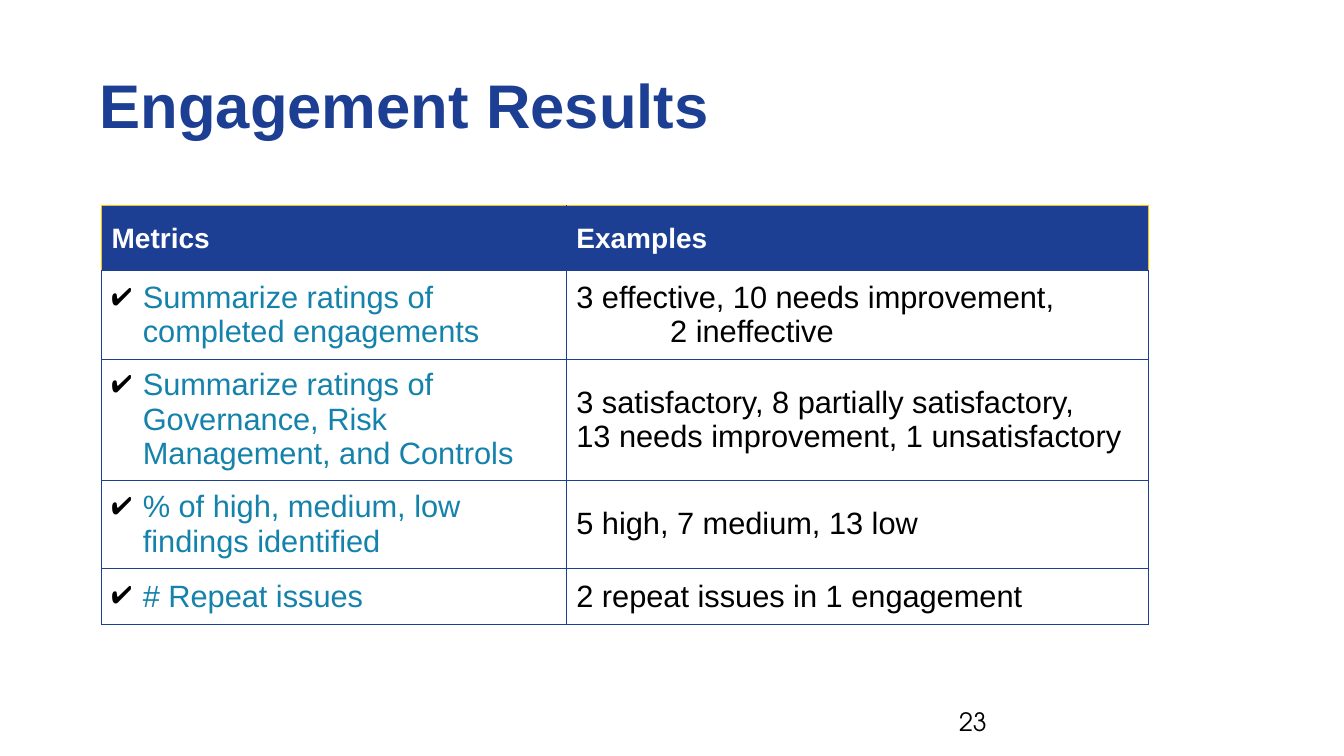
from dataclasses import dataclass

from lxml.etree import SubElement
from pptx import Presentation
from pptx.dml.color import RGBColor
from pptx.enum.text import MSO_ANCHOR, PP_ALIGN
from pptx.oxml.ns import qn
from pptx.util import Pt

NAVY, TEAL, GOLD, BLACK, WHITE = "1C3F94", "1482AB", "FFC000", "000000", "FFFFFF"


@dataclass
class Metric:
    name: str
    examples: list[str]
    height: float
    second_line_indent: float = 0


METRICS = [
    Metric("Summarize ratings of completed engagements",
           ["3 effective, 10 needs improvement,", "2 ineffective"], 63, 67),
    Metric("Summarize ratings of Governance, Risk Management, and Controls",
           ["3 satisfactory, 8 partially satisfactory,",
            "13 needs improvement, 1 unsatisfactory"], 76.5),
    Metric("% of high, medium, low findings identified",
           ["5 high, 7 medium, 13 low"], 63),
    Metric("# Repeat issues", ["2 repeat issues in 1 engagement"], 40.5),
]
HEADER_HEIGHT = 46.5
COLUMN_WIDTHS = [332, 416]


def color(value: str) -> RGBColor:
    return RGBColor.from_string(value)


def style(paragraph, size: float, ink: str, bold: bool = False,
          typeface: str = "Arial") -> None:
    font = paragraph.font
    font.name, font.size, font.bold = typeface, Pt(size), bold
    font.color.rgb = color(ink)


def indent(paragraph, left: float, first: float = 0) -> None:
    properties = paragraph._p.get_or_add_pPr()
    properties.set("marL", str(Pt(left)))
    properties.set("indent", str(Pt(first)))


def add_check(paragraph) -> None:
    indent(paragraph, 22.3, -23.8)
    properties = paragraph._p.get_or_add_pPr()
    ink = SubElement(properties, qn("a:buClr"))
    SubElement(ink, qn("a:srgbClr"), val=BLACK)
    SubElement(properties, qn("a:buChar"), char="✔")


def format_cell(cell, fill: str | None = None, **edges: str) -> None:
    cell.vertical_anchor = MSO_ANCHOR.MIDDLE
    properties = cell._tc.get_or_add_tcPr()
    for side in "LRTB":
        line = SubElement(properties, qn(f"a:ln{side}"), w=str(Pt(0.75)))
        solid = SubElement(line, qn("a:solidFill"))
        SubElement(solid, qn("a:srgbClr"), val=edges.get(side, NAVY))
    if fill:
        cell.fill.solid()
        cell.fill.fore_color.rgb = color(fill)
    else:
        cell.fill.background()


def add_title(slide) -> None:
    title = slide.shapes.title
    title.left, title.top, title.width, title.height = Pt(64), Pt(26), Pt(614), Pt(96.5)
    frame = title.text_frame
    frame.text = "Engagement Results"
    frame.vertical_anchor = MSO_ANCHOR.MIDDLE
    frame.margin_top = frame.margin_bottom = 0
    frame.paragraphs[0].alignment = PP_ALIGN.LEFT
    style(frame.paragraphs[0], 44, NAVY, True)


def add_page_number(slide) -> None:
    frame = slide.shapes.add_textbox(Pt(678), Pt(500.5), Pt(216), Pt(29)).text_frame
    frame.word_wrap = True
    frame.vertical_anchor = MSO_ANCHOR.MIDDLE
    frame.text = "23"
    style(frame.paragraphs[0], 18, BLACK, typeface="TeX Gyre Adventor")


def add_metrics(slide) -> None:
    heights = [HEADER_HEIGHT] + [metric.height for metric in METRICS]
    table = slide.shapes.add_table(
        len(heights), len(COLUMN_WIDTHS), Pt(72.5), Pt(147),
        Pt(sum(COLUMN_WIDTHS)), Pt(sum(heights))).table
    table.horz_banding = False
    for column, width in zip(table.columns, COLUMN_WIDTHS):
        column.width = Pt(width)
    for row, height in zip(table.rows, heights):
        row.height = Pt(height)

    for column, (heading, outer_side) in enumerate([("Metrics", "L"), ("Examples", "R")]):
        cell = table.cell(0, column)
        cell.text = heading
        style(cell.text_frame.paragraphs[0], 20, WHITE, True)
        format_cell(cell, NAVY, **{outer_side: GOLD, "T": GOLD})

    for row, metric in enumerate(METRICS, 1):
        name, examples = table.cell(row, 0), table.cell(row, 1)
        name.text = metric.name
        add_check(name.text_frame.paragraphs[0])
        style(name.text_frame.paragraphs[0], 22, TEAL)
        examples.text = "\n".join(metric.examples)
        for paragraph in examples.text_frame.paragraphs:
            style(paragraph, 22, BLACK)
        if metric.second_line_indent:
            indent(examples.text_frame.paragraphs[1], metric.second_line_indent)
        format_cell(name)
        format_cell(examples)


def main() -> None:
    deck = Presentation()
    deck.slide_width, deck.slide_height = Pt(960), Pt(540)
    slide = deck.slides.add_slide(deck.slide_layouts[5])
    add_title(slide)
    add_page_number(slide)
    add_metrics(slide)
    deck.save("out.pptx")


if __name__ == "__main__":
    main()
